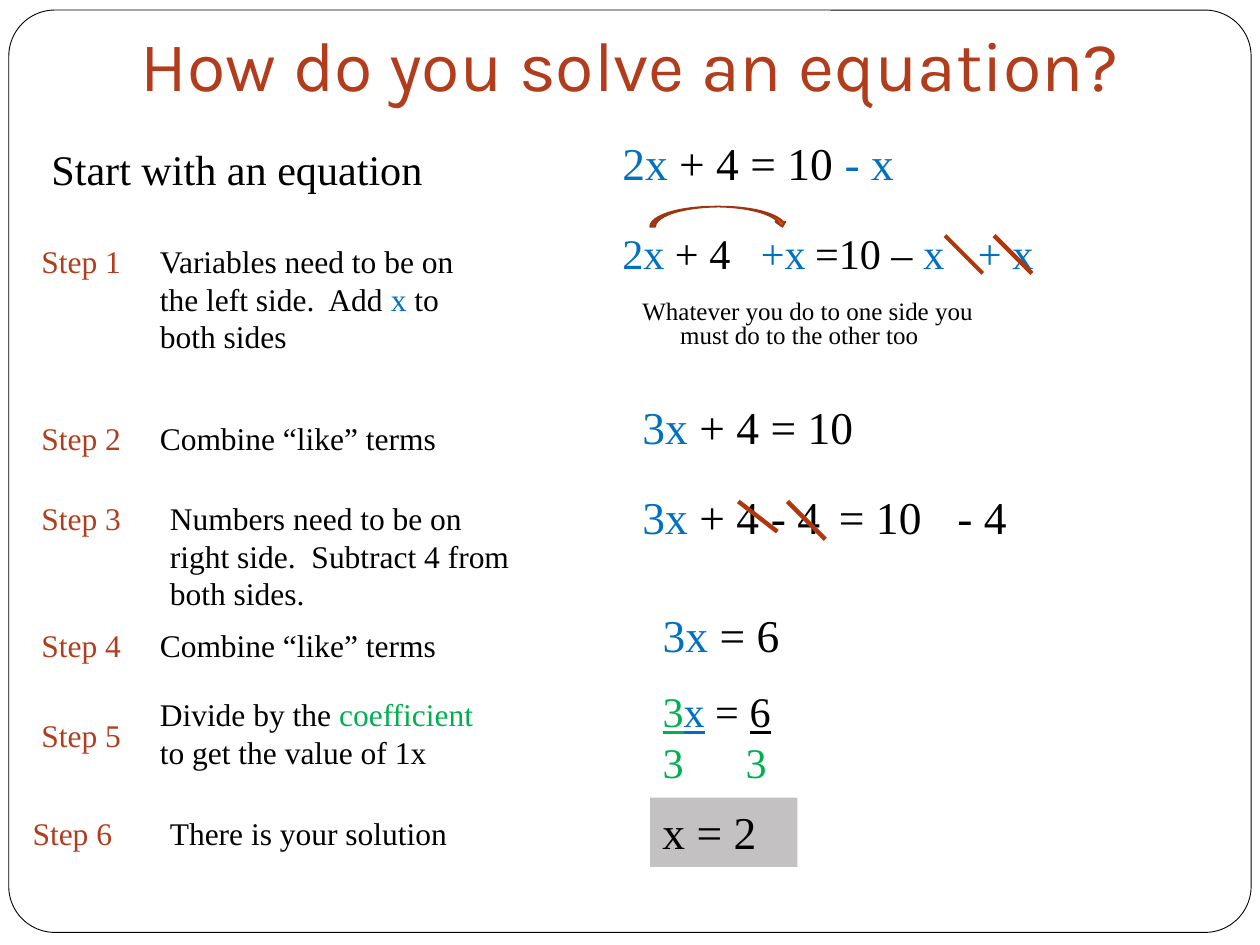
import pptx
import pptx.dml.color
import pptx.enum.shapes
import pptx.enum.text
import pptx.oxml
import pptx.util
from lxml import etree

SHAPES = pptx.enum.shapes.MSO_SHAPE
ANCHOR = pptx.enum.text.MSO_ANCHOR
FIT = pptx.enum.text.MSO_AUTO_SIZE
INCH = pptx.util.Inches
DRAWING = "http://schemas.openxmlformats.org/drawingml/2006/main"

SERIF = "Times New Roman"
BLACK, RUST, BLUE, GREEN = "000000", "B13D1D", "0070C0", "00B050"
LARGE, MEDIUM, SMALL, STEP = 26, 24.1, 14.3, 18

# A paragraph is a list of spans: (text, colour, underlined if given)
# Steps: label, label left, label top, text left, text top, width, height, paragraphs
STEPS = [
    ("Step 1", 0.23, 1.87, 1.17, 1.87, 2.89, 1.01,
     [[("Variables need to be on the left side.  Add ", BLACK), ("x", BLUE),
       (" to both sides", BLACK)]]),
    ("Step 2", 0.23, 3.28, 1.17, 3.28, 2.66, 0.4, [[("Combine “like” terms", BLACK)]]),
    ("Step 3", 0.23, 3.91, 1.25, 3.91, 2.92, 1.01,
     [[("Numbers need to be on", BLACK)],
      [("right side.  Subtract 4 from both sides.", BLACK)]]),
    ("Step 4", 0.23, 4.92, 1.17, 4.92, 2.66, 0.4, [[("Combine “like” terms", BLACK)]]),
    ("Step 5", 0.23, 5.63, 1.17, 5.47, 2.89, 0.71,
     [[("Divide by the ", BLACK), ("coefficient", GREEN)],
      [("to get the value of 1x", BLACK)]]),
    ("Step 6", 0.16, 6.41, 1.25, 6.41, 2.66, 0.4, [[("There is your solution", BLACK)]]),
]

# Working: left, top, width, height, size, line spacing, tab stop, paragraphs
WORKING = [
    (0.31, 1.09, 3.44, 0.55, MEDIUM, 1, None, [[("Start with an equation", BLACK)]]),
    (4.84, 1.02, 3.05, 0.55, LARGE, 1, None,
     [[("2x", BLUE), (" + 4 = 10 ", BLACK), ("- x", BLUE)]]),
    (4.84, 1.8, 3.59, 0.47, MEDIUM, 0.9, 1.53,
     [[("2x", BLUE), (" + 4\t=10 – ", BLACK), ("x", BLUE)]]),
    (5.94, 1.8, 0.7, 0.47, MEDIUM, 0.9, None, [[("+x", BLUE)]]),
    (7.58, 1.8, 0.78, 0.47, MEDIUM, 0.9, None, [[(" + x", BLUE)]]),
    (5, 2.34, 3.05, 0.55, SMALL, 0.8, None,
     [[("Whatever you do to one side you must do to the other too", BLACK)]]),
    (5, 3.12, 2.58, 0.55, LARGE, 1, None, [[("3x", BLUE), (" + 4 = 10", BLACK)]]),
    (5, 3.83, 3.28, 0.55, LARGE, 1, 1.56, [[("3x", BLUE), (" + 4\t= 10", BLACK)]]),
    (6.02, 3.83, 0.7, 0.55, LARGE, 1, None, [[("- 4", BLACK)]]),
    (7.5, 3.83, 0.7, 0.55, LARGE, 1, None, [[("- 4", BLACK)]]),
    (5.16, 4.77, 2.58, 0.55, LARGE, 1, None, [[("3x", BLUE), (" = 6", BLACK)]]),
    (5.16, 5.47, 2.58, 0.86, MEDIUM, 0.8, 0.66,
     [[("3", GREEN, True), ("x", BLUE, True), (" = ", BLACK), ("6", BLACK, True)],
      [("3\t3", GREEN)]]),
]

# Strike-outs: start x, start y, end x, end y, weight
STRIKES = [
    (7.5, 1.87, 7.8, 2.17, 2.25),
    (7.89, 1.87, 8.19, 2.17, 2.5),
    (5.86, 3.98, 6.17, 4.22, 2.5),
    (6.25, 3.98, 6.55, 4.28, 2.5),
]


def colour(code):
    return pptx.dml.color.RGBColor.from_string(code)


def set_indent(para, tab):
    """Hang the first line, or place one tab stop where the line has a gap."""
    properties = para._p.get_or_add_pPr()
    if tab:
        stops = etree.SubElement(properties, f"{{{DRAWING}}}tabLst")
        etree.SubElement(stops, f"{{{DRAWING}}}tab", pos=str(INCH(tab)), algn="l")
    else:
        properties.set("marL", str(INCH(0.3)))
        properties.set("indent", str(-INCH(0.3)))


def write(box, paragraphs, size, font=SERIF, spacing=1, hanging=False, tab=None):
    frame = box.text_frame
    frame.word_wrap = True
    frame.vertical_anchor = ANCHOR.TOP
    for number, spans in enumerate(paragraphs):
        para = frame.add_paragraph() if number else frame.paragraphs[0]
        para.alignment = pptx.enum.text.PP_ALIGN.LEFT
        para.line_spacing = float(spacing)
        if hanging:
            para.space_before = pptx.util.Pt(5.8)
            set_indent(para, tab)
        for text, code, *underlined in spans:
            span = para.add_run()
            span.text = text
            span.font.name = font
            span.font.size = pptx.util.Pt(size)
            span.font.color.rgb = colour(code)
            if underlined:
                span.font.underline = True
    return frame


def add_text(page, place, paragraphs, size, **style):
    box = page.shapes.add_textbox(*map(INCH, place))
    return write(box, paragraphs, size, **style)


def add_shape(page, kind, place, fill, line=None, weight=1):
    shape = page.shapes.add_shape(kind, *map(INCH, place))
    shape.shadow.inherit = False
    shape.fill.solid()
    shape.fill.fore_color.rgb = colour(fill)
    if line:
        shape.line.color.rgb = colour(line)
        shape.line.width = pptx.util.Pt(weight)
    else:
        shape.line.fill.background()
    return shape


def add_strike(page, ends, weight):
    strike = page.shapes.add_connector(
        pptx.enum.shapes.MSO_CONNECTOR.STRAIGHT, *map(INCH, ends))
    strike.line.color.rgb = colour("B1360B")
    strike.line.width = pptx.util.Pt(weight)
    etree.SubElement(strike._element.spPr, f"{{{DRAWING}}}effectLst")


def main():
    deck = pptx.Presentation()
    deck.slide_width, deck.slide_height = INCH(10), INCH(7.5)
    page = deck.slides.add_slide(deck.slide_layouts[6])

    # Frame and title
    border = add_shape(page, SHAPES.ROUNDED_RECTANGLE, (0.07, 0.08, 9.86, 7.32),
                       "FFFFFF", BLACK, 0.5)
    border.adjustments[0] = 0.05
    title = add_text(page, (1.02, -0.31, 8.5, 1.25),
                     [[("How do you solve an equation?", RUST)]], 40, font="Karla")
    title.vertical_anchor = ANCHOR.BOTTOM
    title.margin_bottom = INCH(0.1)

    # Steps on the left
    for label, label_left, label_top, left, top, width, height, paragraphs in STEPS:
        for place, content in (
            ((label_left, label_top, 1.02, 0.4), [[(label, RUST)]]),
            ((left, top, width, height), paragraphs),
        ):
            frame = add_text(page, place, content, STEP)
            frame.auto_size = FIT.SHAPE_TO_FIT_TEXT

    # Working on the right
    for *place, size, spacing, tab, paragraphs in WORKING:
        add_text(page, place, paragraphs, size, spacing=spacing, hanging=True, tab=tab)

    # Solution
    solution = add_shape(page, SHAPES.RECTANGLE, (5.16, 6.33, 1.17, 0.55), "C3C1C1")
    write(solution, [[("x = 2", BLACK)]], LARGE, hanging=True)

    # Cancelled terms and the arrow over the moved term
    for *ends, weight in STRIKES:
        add_strike(page, ends, weight)
    add_shape(page, SHAPES.CURVED_DOWN_ARROW, (5.16, 1.64, 1.09, 0.16),
              "D34817", "9C3511")

    deck.save("out.pptx")


if __name__ == "__main__":
    main()
